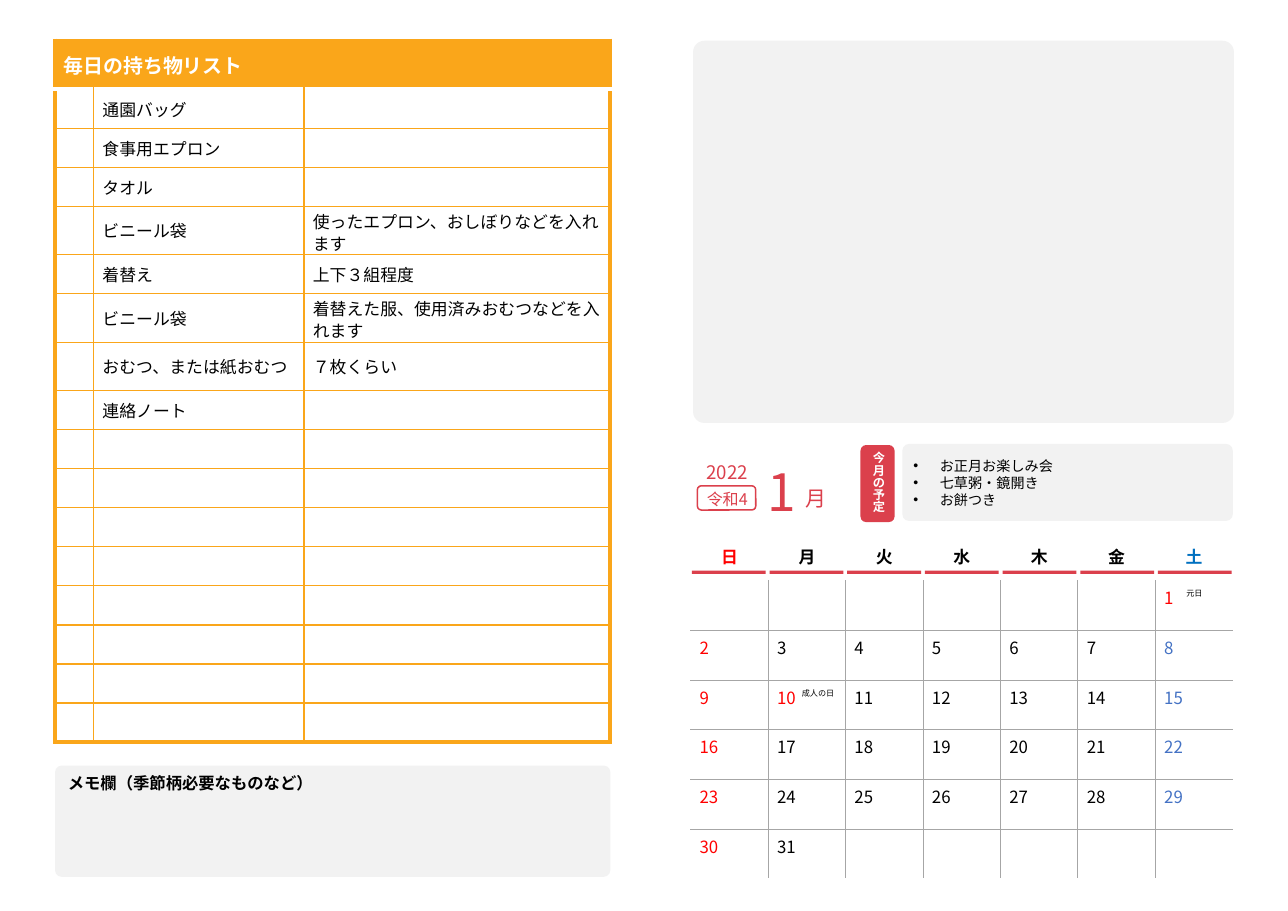
"""Builds a nursery belongings list with a monthly calendar on an A4 page."""
from dataclasses import dataclass

from lxml import etree
from pptx import Presentation
from pptx.dml.color import RGBColor
from pptx.enum.shapes import MSO_SHAPE
from pptx.enum.text import MSO_ANCHOR, MSO_AUTO_SIZE, PP_ALIGN
from pptx.oxml.ns import qn
from pptx.util import Inches, Pt

ROUNDED = MSO_SHAPE.ROUNDED_RECTANGLE
RECTANGLE = MSO_SHAPE.RECTANGLE
TOP, MIDDLE = MSO_ANCHOR.TOP, MSO_ANCHOR.MIDDLE
LEFT, CENTER = PP_ALIGN.LEFT, PP_ALIGN.CENTER
NO_AUTOFIT = MSO_AUTO_SIZE.NONE


@dataclass(frozen=True)
class Theme:
    """Holds the font, colours and type sizes of the page."""
    font: str = "Noto Sans CJK JP"
    ink: str = "000000"
    white: str = "FFFFFF"
    panel: str = "F2F2F2"
    grid: str = "A6A6A6"
    orange: str = "FAA61A"
    crimson: str = "DB404C"
    sunday: str = "FF0000"
    saturday: str = "4472C4"
    saturday_head: str = "0070C0"
    month: float = 33.6
    month_sign: float = 13.7
    list_head: float = 13
    year: float = 12.2
    table: float = 11
    memo: float = 10.7
    era: float = 10.5
    plan: float = 9.2
    tab: float = 8
    holiday: float = 5.3


THEME = Theme()
WEEKDAYS = "日月火水木金土"
WEEKS, FIRST_COLUMN, LAST_DAY = 6, 6, 31
HOLIDAYS = {1: ("元日", 10.67, 5.29), 10: ("成人の日", 7.18, 6.2)}
PLANS = ["お正月お楽しみ会", "七草粥・鏡開き", "お餅つき"]
BELONGINGS = [
    ("通園バッグ", ""),
    ("食事用エプロン", ""),
    ("タオル", ""),
    ("ビニール袋", "使ったエプロン、おしぼりなどを入れます"),
    ("着替え", "上下３組程度"),
    ("ビニール袋", "着替えた服、使用済みおむつなどを入れます"),
    ("おむつ、または紙おむつ", "７枚くらい"),
    ("連絡ノート", ""),
]
LIST_ROWS, TALL_ROWS = 17, (0, 4, 6, 7)
LIST_HEIGHT, TALL_HEIGHT = 6.37, 0.44


def style(para, size, color=THEME.ink, bold=False, align=LEFT):
    """Sets the font, colour and alignment of a paragraph."""
    para.alignment = align
    font = para.font
    font.size, font.bold, font.name = Pt(size), bold, THEME.font
    font.color.rgb = RGBColor.from_string(color)
    etree.SubElement(font._element if hasattr(font, "_element") else font._rPr,
                     qn("a:ea"), typeface=THEME.font)
    if not para.text:
        etree.SubElement(para._p, qn("a:endParaRPr"), sz=str(int(size * 100)))


def place(shape, left, top, width, height):
    """Moves and sizes a shape."""
    shape.left, shape.top = Inches(left), Inches(top)
    shape.width, shape.height = Inches(width), Inches(height)


def add_panel(page, kind, bounds, fill=None, line=None, radius=None):
    """Adds a flat shape with an optional fill, outline and corner radius."""
    shape = page.shapes.add_shape(kind, *map(Inches, bounds))
    shape.shadow.inherit = False
    if radius is not None:
        shape.adjustments[0] = radius
    if fill:
        shape.fill.solid()
        shape.fill.fore_color.rgb = RGBColor.from_string(fill)
    else:
        shape.fill.background()
    if line:
        shape.line.color.rgb = RGBColor.from_string(line)
        shape.line.width = Pt(1)
    else:
        shape.line.fill.background()
    return shape


def add_label(page, text, bounds, size, color=THEME.ink, align=LEFT):
    """Adds one line of text."""
    frame = page.shapes.add_textbox(*map(Inches, bounds)).text_frame
    frame.word_wrap = True
    frame.margin_left = Inches(0.1 if align == LEFT else 0)
    frame.margin_right = 0
    frame.text = text
    style(frame.paragraphs[0], size, color, align=align)


def add_grid(page, bounds, widths, heights):
    """Adds a plain table with the given column widths and row heights."""
    table = page.shapes.add_table(
        len(heights), len(widths), *map(Inches, bounds)).table
    table.first_row = table.horz_banding = False
    for column, width in zip(table.columns, widths):
        column.width = Inches(width)
    for row, height in zip(table.rows, heights):
        row.height = Inches(height)
    return table


def fill_cell(cell, text, edges, fill=None, anchor=MIDDLE, **font):
    """Writes a cell and sets its margins, borders (L, R, T, B) and fill."""
    cell.text = text
    cell.vertical_anchor = anchor
    cell.margin_left = cell.margin_right = Inches(0.08)
    cell.margin_top = cell.margin_bottom = Inches(0.04)
    style(cell.text_frame.paragraphs[0], THEME.table if "size" not in font
          else font.pop("size"), **font)
    properties = cell._tc.get_or_add_tcPr()
    for side, (color, width) in zip("LRTB", edges):
        line = etree.SubElement(properties, qn(f"a:ln{side}"), w=str(Pt(width)))
        paint = etree.SubElement(line, qn("a:solidFill"))
        etree.SubElement(paint, qn("a:srgbClr"), val=color)
    if fill:
        cell.fill.solid()
        cell.fill.fore_color.rgb = RGBColor.from_string(fill)
    else:
        cell.fill.background()


def add_belongings(page):
    """Adds the table of things to bring every day."""
    short = (LIST_HEIGHT - TALL_HEIGHT * len(TALL_ROWS)) / (LIST_ROWS - len(TALL_ROWS))
    heights = [TALL_HEIGHT if row in TALL_ROWS else short for row in range(LIST_ROWS)]
    table = add_grid(page, (0.5, 0.37, 5.04, LIST_HEIGHT), (0.35, 1.91, 2.78), heights)
    thin, thick, gap = (THEME.orange, 1), (THEME.orange, 3), (THEME.white, 3)
    table.cell(0, 0).merge(table.cell(0, 2))
    for column in range(3):
        fill_cell(table.cell(0, column), "" if column else "毎日の持ち物リスト",
                  (thick, thick, thick, gap), THEME.orange,
                  size=THEME.list_head, color=THEME.white, bold=True)
    for row in range(1, LIST_ROWS):
        entry = BELONGINGS[row - 1] if row <= len(BELONGINGS) else ("", "")
        for column, text in enumerate(("", *entry)):
            cell = table.cell(row, column)
            edges = (thin if column else thick, thick if column == 2 else thin,
                     gap if row == 1 else thin, thick if row == LIST_ROWS - 1 else thin)
            fill_cell(cell, text, edges)
            if len(text) > 17:
                cell.margin_bottom = 0
                cell.text_frame.paragraphs[0].line_spacing = 0.9


def add_calendar(page):
    """Adds the month grid, its weekday bars and its holiday names."""
    table = add_grid(page, (6.27, 4.82, 4.92, 3.16), [4.92 / 7] * 7, [3.16 / 7] * 7)
    hidden, grid = (THEME.white, 0.75), (THEME.grid, 0.75)
    head_colors = {0: THEME.sunday, 6: THEME.saturday_head}
    day_colors = {0: THEME.sunday, 6: THEME.saturday}
    for column, weekday in enumerate(WEEKDAYS):
        fill_cell(table.cell(0, column), weekday, [hidden] * 4, bold=True,
                  color=head_colors.get(column, THEME.ink), align=CENTER)
        for row in range(1, WEEKS + 1):
            day = (row - 1) * 7 + column - FIRST_COLUMN + 1
            color = THEME.sunday if day in HOLIDAYS else day_colors.get(column, THEME.ink)
            edges = (grid if column else hidden, grid if column < 6 else hidden,
                     grid if row > 1 else hidden, grid if row < WEEKS else hidden)
            fill_cell(table.cell(row, column), str(day) if 1 <= day <= LAST_DAY else "",
                      edges, anchor=TOP, color=color)
        add_panel(page, RECTANGLE, (6.28 + 0.705 * column, 5.18, 0.67, 0.03), THEME.crimson)
    for name, left, top in HOLIDAYS.values():
        add_label(page, name, (left, top, 0.5, 0.19), THEME.holiday)


def add_month(page):
    """Adds the month title with its year and era."""
    title = page.shapes.title
    place(title, 6.87, 4.13, 0.53, 0.67)
    frame = title.text_frame
    frame.text = "1"
    frame.auto_size, frame.vertical_anchor = NO_AUTOFIT, TOP
    style(frame.paragraphs[0], THEME.month, THEME.crimson)
    add_label(page, "月", (7.21, 4.36, 0.39, 0.33), THEME.month_sign, THEME.crimson)
    add_label(page, "令和4", (6.29, 4.39, 0.62, 0.28), THEME.era, THEME.crimson, CENTER)
    add_label(page, "2022", (6.29, 4.13, 0.62, 0.31), THEME.year, THEME.crimson, CENTER)
    add_panel(page, ROUNDED, (6.33, 4.41, 0.53, 0.22), line=THEME.crimson)


def add_plans(page):
    """Adds the tab and the bulleted plans of the month."""
    add_panel(page, ROUNDED, (8.19, 4.03, 3, 0.7), THEME.panel, radius=0.09)
    tab = add_panel(page, ROUNDED, (7.81, 4.04, 0.31, 0.7), THEME.crimson)
    tab.text_frame.text = "今月の予定"
    para = tab.text_frame.paragraphs[0]
    para.line_spacing = Pt(8)
    style(para, THEME.tab, THEME.white, True, CENTER)
    body = page.placeholders[1]
    place(body, 8.19, 4.03, 3, 0.7)
    body.element.getparent().append(body.element)
    frame = body.text_frame
    frame.text = "\n".join(PLANS)
    frame.auto_size, frame.vertical_anchor = NO_AUTOFIT, MIDDLE
    for para in frame.paragraphs:
        style(para, THEME.plan)
        para.line_spacing, para.space_before = Pt(11.1), Pt(0)
        properties = para._p.get_or_add_pPr()
        properties.set("marL", str(Inches(0.24)))
        properties.set("indent", str(-Inches(0.24)))


def add_memo(page):
    """Adds the memo panel."""
    memo = add_panel(page, ROUNDED, (0.5, 6.95, 5.04, 1.01), THEME.panel, radius=0.06)
    frame = memo.text_frame
    frame.text = "メモ欄（季節柄必要なものなど）"
    frame.vertical_anchor = TOP
    style(frame.paragraphs[0], THEME.memo, bold=True)


def main():
    """Builds the page and saves the deck."""
    deck = Presentation()
    deck.slide_width, deck.slide_height = Inches(11.69), Inches(8.27)
    page = deck.slides.add_slide(deck.slide_layouts[1])
    add_calendar(page)
    add_panel(page, ROUNDED, (6.29, 0.37, 4.91, 3.47), THEME.panel, radius=0.03)
    add_plans(page)
    add_belongings(page)
    add_memo(page)
    add_month(page)
    deck.save("out.pptx")


if __name__ == "__main__":
    main()
